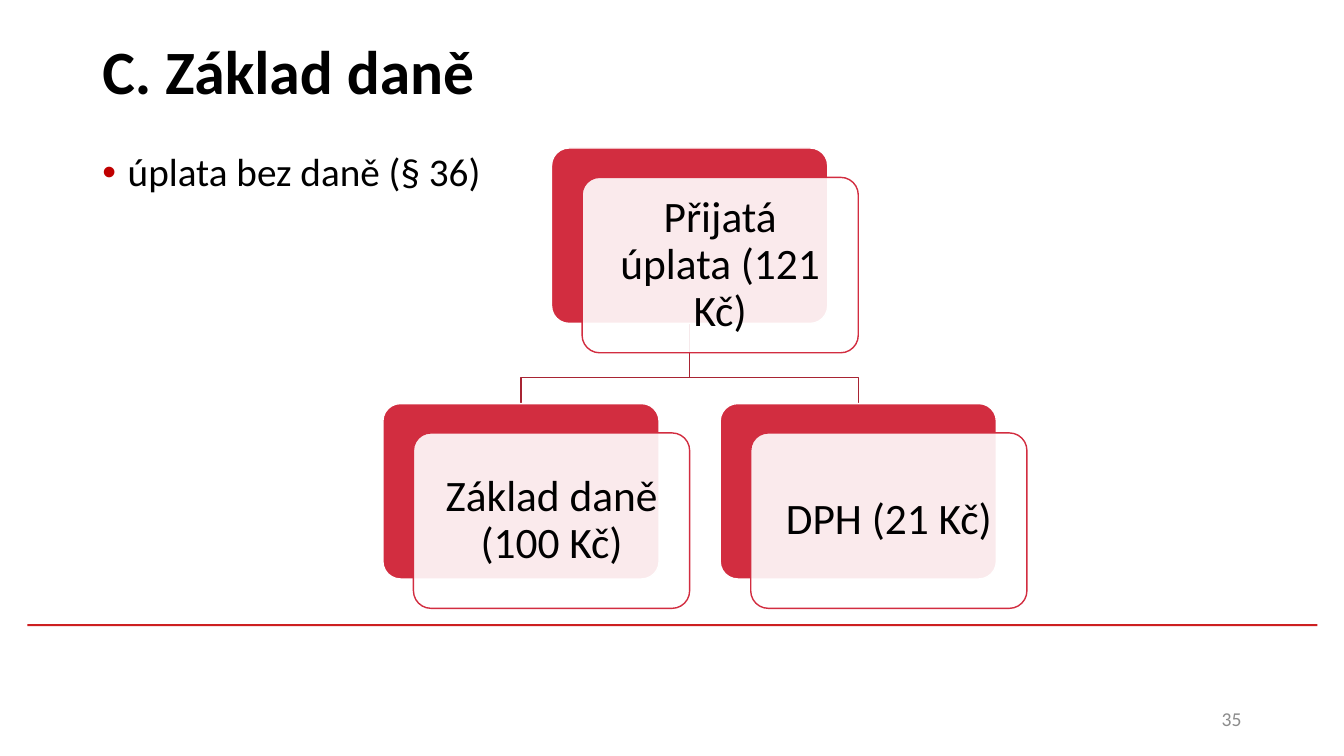
from dataclasses import dataclass

from lxml import etree
from pptx import Presentation
from pptx.dml.color import RGBColor
from pptx.enum.shapes import MSO_SHAPE
from pptx.enum.text import MSO_ANCHOR, PP_ALIGN
from pptx.oxml.ns import qn
from pptx.shapes.base import BaseShape
from pptx.slide import Slide
from pptx.text.text import TextFrame
from pptx.util import Cm, Pt

RECT, ROUND = MSO_SHAPE.RECTANGLE, MSO_SHAPE.ROUNDED_RECTANGLE
TOP, MIDDLE = MSO_ANCHOR.TOP, MSO_ANCHOR.MIDDLE
LEFT, CENTER, RIGHT = PP_ALIGN.LEFT, PP_ALIGN.CENTER, PP_ALIGN.RIGHT


@dataclass(frozen=True)
class Theme:
    font: str = "Calibri"
    black: str = "000000"
    white: str = "FFFFFF"
    gray: str = "8C8C8C"
    red: str = "D22D40"
    link: str = "A82433"
    rule: str = "CD1F21"
    bullet: str = "C00000"
    title: int = 44
    body: int = 28
    card: int = 31
    number: int = 14


@dataclass(frozen=True)
class Card:
    text: str
    left: float
    top: float

    @property
    def mid(self) -> float:
        return self.left + CARD_W / 2


@dataclass(frozen=True)
class Label:
    text: str
    box: tuple[float, float, float, float]
    size: int
    color: str
    bold: bool = False
    align: PP_ALIGN = LEFT
    anchor: MSO_ANCHOR = MIDDLE
    bullet: bool = False


THEME = Theme()

# Card geometry in centimetres
CARD_W, CARD_H = 6.96, 4.42
SHIFT_X, SHIFT_Y = 0.77, 0.74
STEP = 4.25
ROOT_X, ROOT_Y, LEAF_Y, BEND_Y = 13.9, 3.73, 10.17, 9.52
INSET = 0.46

ROOT = Card("Přijatá úplata (121 Kč)", ROOT_X, ROOT_Y)
LEAVES = [
    Card("Základ daně (100 Kč)", ROOT_X - STEP, LEAF_Y),
    Card("DPH (21 Kč)", ROOT_X + STEP, LEAF_Y),
]
LABELS = [
    Label("C. Základ daně", (2.33, 0.05, 29.21, 3.68), THEME.title, THEME.black, bold=True),
    Label("úplata bez daně (§ 36)", (2.33, 3.73, 29.21, 11.61), THEME.body, THEME.black,
          anchor=TOP, bullet=True),
    Label("35", (23.92, 17.65, 7.62, 1.02), THEME.number, THEME.gray, align=RIGHT),
]


def rgb(code: str) -> RGBColor:
    return RGBColor.from_string(code)


def paint(shape: BaseShape, fill: str | None, line: str | None) -> None:
    shape.shadow.inherit = False
    if fill:
        shape.fill.solid()
        shape.fill.fore_color.rgb = rgb(fill)
    else:
        shape.fill.background()
    if line:
        shape.line.color.rgb = rgb(line)
        shape.line.width = Pt(1)
    else:
        shape.line.fill.background()


def write(frame: TextFrame, item: Label) -> None:
    frame.word_wrap = True
    frame.vertical_anchor = item.anchor
    para = frame.paragraphs[0]
    para.text = item.text
    para.alignment = item.align
    para.line_spacing = 0.9
    if item.bullet:
        props = para._p.get_or_add_pPr()
        props.set("marL", str(Cm(0.64)))
        props.set("indent", str(-Cm(0.64)))
        tint = etree.SubElement(props, qn("a:buClr"))
        etree.SubElement(tint, qn("a:srgbClr"), val=THEME.bullet)
        etree.SubElement(props, qn("a:buFont"), typeface="Arial")
        etree.SubElement(props, qn("a:buChar"), char="•")
    para.font.name = THEME.font
    para.font.size = Pt(item.size)
    para.font.bold = item.bold
    para.font.color.rgb = rgb(item.color)


def add_label(slide: Slide, item: Label) -> None:
    box = slide.shapes.add_textbox(*map(Cm, item.box))
    write(box.text_frame, item)


def add_link(slide: Slide, start: Card, end: Card) -> None:
    base = start.top + CARD_H
    path = [(start.mid, base), (start.mid, BEND_Y), (end.mid, BEND_Y), (end.mid, end.top)]
    points = [(Cm(x), Cm(y)) for x, y in path]
    pen = slide.shapes.build_freeform(*points[0])
    pen.add_line_segments(points[1:], close=False)
    paint(pen.convert_to_shape(), None, THEME.link)


def add_panel(slide: Slide, left: float, top: float, fill: str, line: str) -> BaseShape:
    panel = slide.shapes.add_shape(ROUND, Cm(left), Cm(top), Cm(CARD_W), Cm(CARD_H))
    panel.adjustments[0] = 0.1
    paint(panel, fill, line)
    return panel


def add_card(slide: Slide, card: Card) -> None:
    add_panel(slide, card.left, card.top, THEME.red, THEME.white)
    front = add_panel(slide, card.left + SHIFT_X, card.top + SHIFT_Y, THEME.white, THEME.red)
    # Let the red panel show through the white one
    tint = front.fill._xPr.find(qn("a:solidFill"))[0]
    etree.SubElement(tint, qn("a:alpha"), val="90000")
    frame = front.text_frame
    frame.margin_left = frame.margin_right = Cm(INSET)
    frame.margin_top = frame.margin_bottom = Cm(INSET)
    box = (card.left, card.top, CARD_W, CARD_H)
    write(frame, Label(card.text, box, THEME.card, THEME.black, align=CENTER))


def main() -> None:
    deck = Presentation()
    deck.slide_width, deck.slide_height = Cm(33.87), Cm(19.05)
    slide = deck.slides.add_slide(deck.slide_layouts[6])

    # Footer rule
    rule = slide.shapes.add_shape(RECT, Cm(0.69), Cm(15.73), Cm(32.51), Cm(0.05))
    paint(rule, THEME.rule, None)

    # Title, bullet and slide number
    for item in LABELS:
        add_label(slide, item)

    # Tree: links lie behind the cards
    for leaf in reversed(LEAVES):
        add_link(slide, ROOT, leaf)
    for card in [ROOT, *LEAVES]:
        add_card(slide, card)

    deck.save("out.pptx")


if __name__ == "__main__":
    main()
